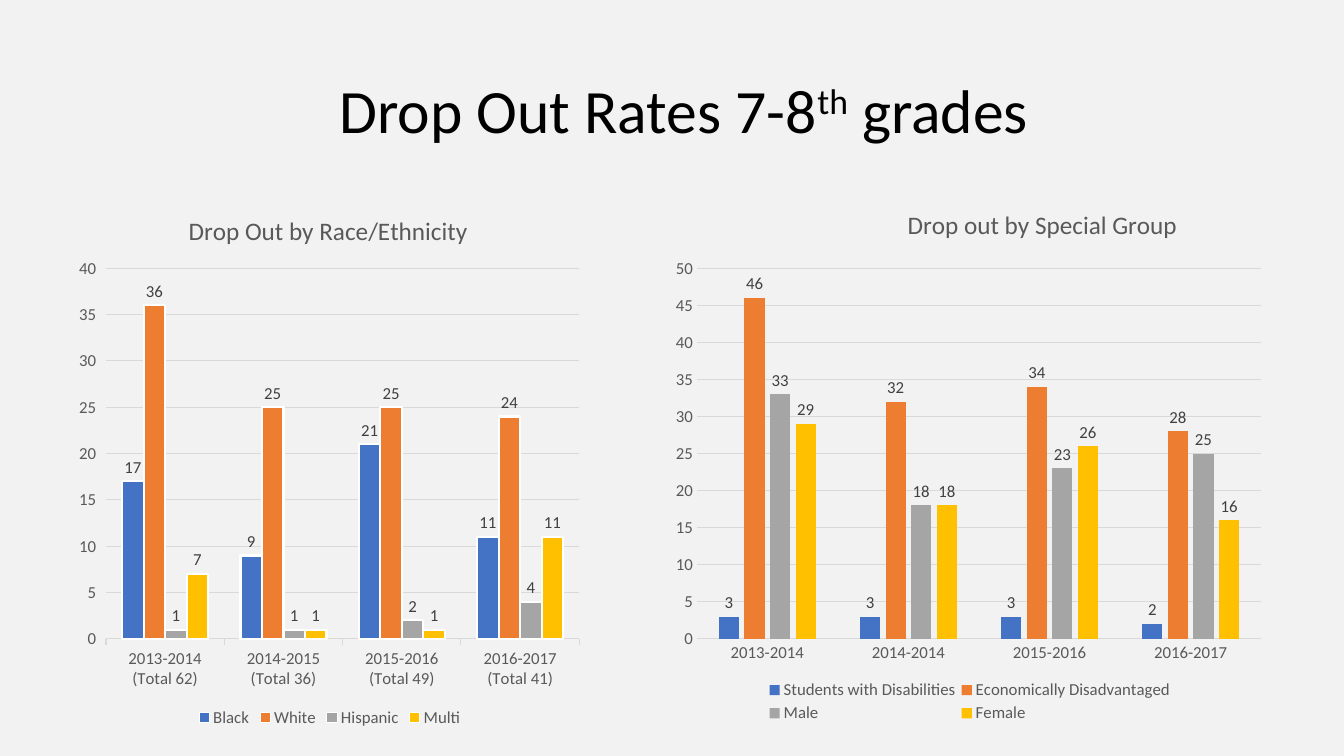
from lxml import etree
from pptx import Presentation
from pptx.chart.data import CategoryChartData
from pptx.dml.color import RGBColor
from pptx.enum.chart import (XL_CHART_TYPE, XL_LABEL_POSITION,
                             XL_LEGEND_POSITION, XL_TICK_MARK)
from pptx.enum.text import MSO_ANCHOR
from pptx.oxml.ns import qn
from pptx.util import Inches, Pt

COLUMNS = XL_CHART_TYPE.COLUMN_CLUSTERED
OUTER = XL_LABEL_POSITION.OUTSIDE_END
BOTTOM = XL_LEGEND_POSITION.BOTTOM
TICK_OUT = XL_TICK_MARK.OUTSIDE
TICK_NONE = XL_TICK_MARK.NONE
MIDDLE = MSO_ANCHOR.MIDDLE

FONT = "Calibri"
PAPER = RGBColor(0xF2, 0xF2, 0xF2)
BLACK = RGBColor(0, 0, 0)
WHITE = RGBColor(255, 255, 255)
GRAY = RGBColor(0x59, 0x59, 0x59)
DARK = RGBColor(0x40, 0x40, 0x40)
RULE = RGBColor(0xD9, 0xD9, 0xD9)
FILLS = [RGBColor(0x44, 0x72, 0xC4), RGBColor(0xED, 0x7D, 0x31),
         RGBColor(0xA5, 0xA5, 0xA5), RGBColor(0xFF, 0xC0, 0x00)]

# Title runs: text, baseline shift in thousandths of a percent
TITLE = [("Drop Out Rates 7-8", None), ("th", "30000"), (" grades", None)]

# Layout entries are fractions of the chart: x, y and, where given, w, h
CHARTS = [
    {"title": "Drop Out by Race/Ethnicity",
     "left": 0.69, "width": 5.16,
     "cats": ["2013-2014 (Total 62)", "2014-2015 (Total 36)",
              "2015-2016 (Total 49)", "2016-2017 (Total 41)"],
     "series": [("Black", (17, 9, 21, 11)), ("White", (36, 25, 25, 24)),
                ("Hispanic", (1, 1, 2, 4)), ("Multi", (7, 1, 1, 11))],
     "top": 40, "tick": TICK_OUT, "gap": 150, "overlap": 0, "edge": True,
     "layout": {"title": (0.22, 0.04), "plotArea": (0.07, 0.15, 0.91, 0.68)}},
    {"title": "Drop out by Special Group",
     "left": 6.61, "width": 6.02,
     "cats": ["2013-2014", "2014-2014", "2015-2016", "2016-2017"],
     "series": [("Students with Disabilities", (3, 3, 3, 2)),
                ("Economically Disadvantaged", (46, 32, 34, 28)),
                ("Male", (33, 18, 23, 25)), ("Female", (29, 18, 26, 16))],
     "top": 50, "tick": TICK_NONE, "gap": 219, "overlap": -27, "edge": False,
     "layout": {"title": (0.39, 0.03), "plotArea": (0.05, 0.15, 0.93, 0.68),
                "legend": (0.16, 0.9, 0.68, 0.09)}},
]


def style(font, size, color):
    font.name, font.size, font.bold = FONT, Pt(size), False
    font.color.rgb = color


def place(chart, tag, box):
    """Fix the place of a chart part by a manual layout."""
    part = chart._chartSpace.chart.find(qn("c:" + tag))
    for old in part.findall(qn("c:layout")):
        part.remove(old)
    layout = etree.Element(qn("c:layout"))
    part.insert(0 if tag == "plotArea" else 1, layout)
    manual = etree.SubElement(layout, qn("c:manualLayout"))
    items = [("layoutTarget", "inner")] if tag == "plotArea" else []
    items += [("xMode", "edge"), ("yMode", "edge")]
    items += zip("xywh", box)
    for name, val in items:
        etree.SubElement(manual, qn("c:" + name)).set("val", str(val))


def add_title(slide):
    box = slide.shapes.add_textbox(Inches(3.27), Inches(0.4),
                                   Inches(7.73), Inches(1.45))
    frame = box.text_frame
    frame.word_wrap = True
    frame.vertical_anchor = MIDDLE
    para = frame.paragraphs[0]
    para.line_spacing = 0.9
    for text, shift in TITLE:
        run = para.add_run()
        run.text = text
        style(run.font, 44, BLACK)
        if shift:
            run.font._element.set("baseline", shift)


def add_columns(slide, item):
    data = CategoryChartData()
    data.categories = item["cats"]
    for name, vals in item["series"]:
        data.add_series(name, vals)
    chart = slide.shapes.add_chart(
        COLUMNS, Inches(item["left"]), Inches(1.85),
        Inches(item["width"]), Inches(5.41), data).chart
    style(chart.font, 10, BLACK)

    run = chart.chart_title.text_frame.paragraphs[0].add_run()
    run.text = item["title"]
    style(run.font, 18, GRAY)
    chart.chart_title.include_in_layout = False

    chart.has_legend = True
    chart.legend.position = BOTTOM
    chart.legend.include_in_layout = False
    style(chart.legend.font, 12, GRAY)

    cat, val = chart.category_axis, chart.value_axis
    for axis in (cat, val):
        style(axis.tick_labels.font, 12, GRAY)
        axis.minor_tick_mark = TICK_NONE
        axis.major_tick_mark = item["tick"]
    val.minimum_scale, val.maximum_scale, val.major_unit = 0, item["top"], 5
    val.format.line.fill.background()
    for line in (cat.format.line, val.major_gridlines.format.line):
        line.color.rgb = RULE
        line.width = Pt(0.75)

    plot = chart.plots[0]
    plot.vary_by_categories = False
    plot.gap_width, plot.overlap = item["gap"], item["overlap"]
    for series, fill in zip(plot.series, FILLS):
        series.format.fill.solid()
        series.format.fill.fore_color.rgb = fill
        if item["edge"]:
            series.format.line.color.rgb = WHITE
            series.format.line.width = Pt(1.5)
        labels = series.data_labels
        labels.show_value = True
        labels.position = OUTER
        style(labels.font, 12, DARK)

    for tag, box in item["layout"].items():
        place(chart, tag, box)


def main():
    deck = Presentation()
    deck.slide_width, deck.slide_height = Inches(13.33), Inches(7.5)
    slide = deck.slides.add_slide(deck.slide_layouts[6])
    slide.background.fill.solid()
    slide.background.fill.fore_color.rgb = PAPER
    add_title(slide)
    for item in CHARTS:
        add_columns(slide, item)
    deck.save("out.pptx")


if __name__ == "__main__":
    main()
